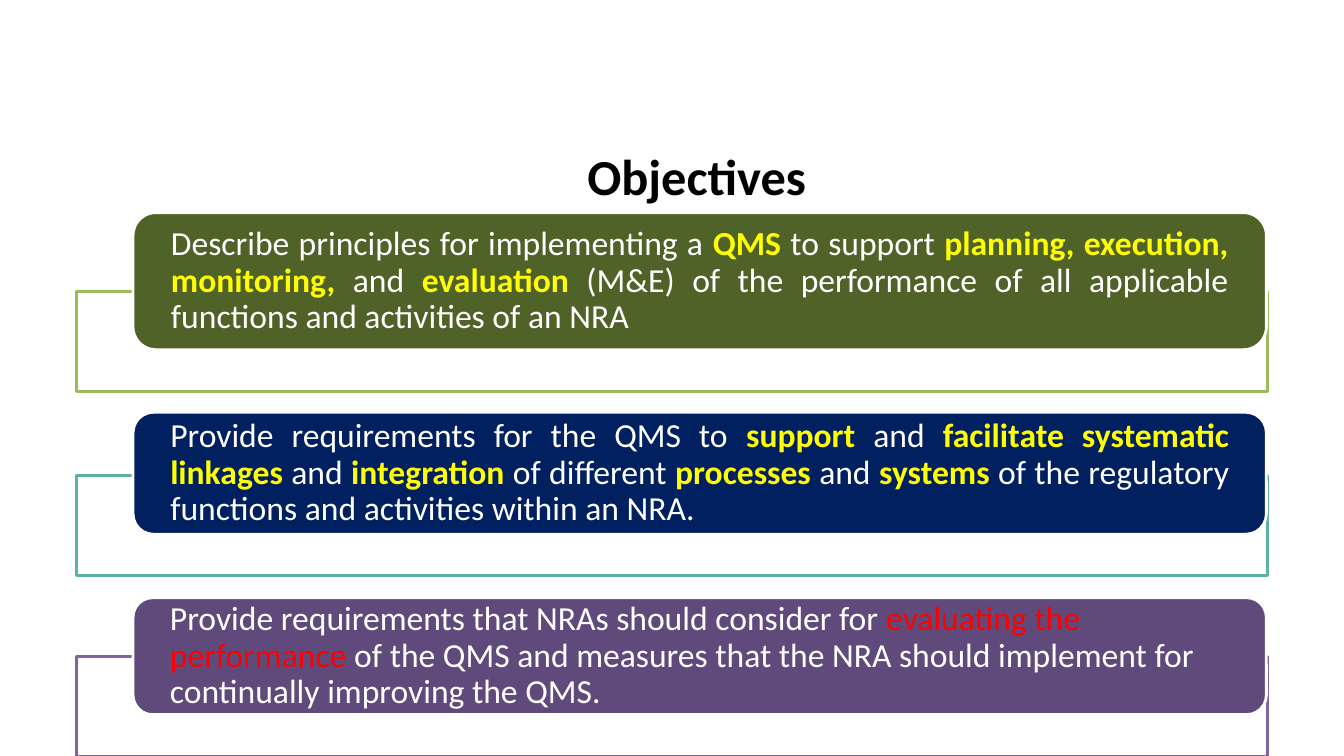
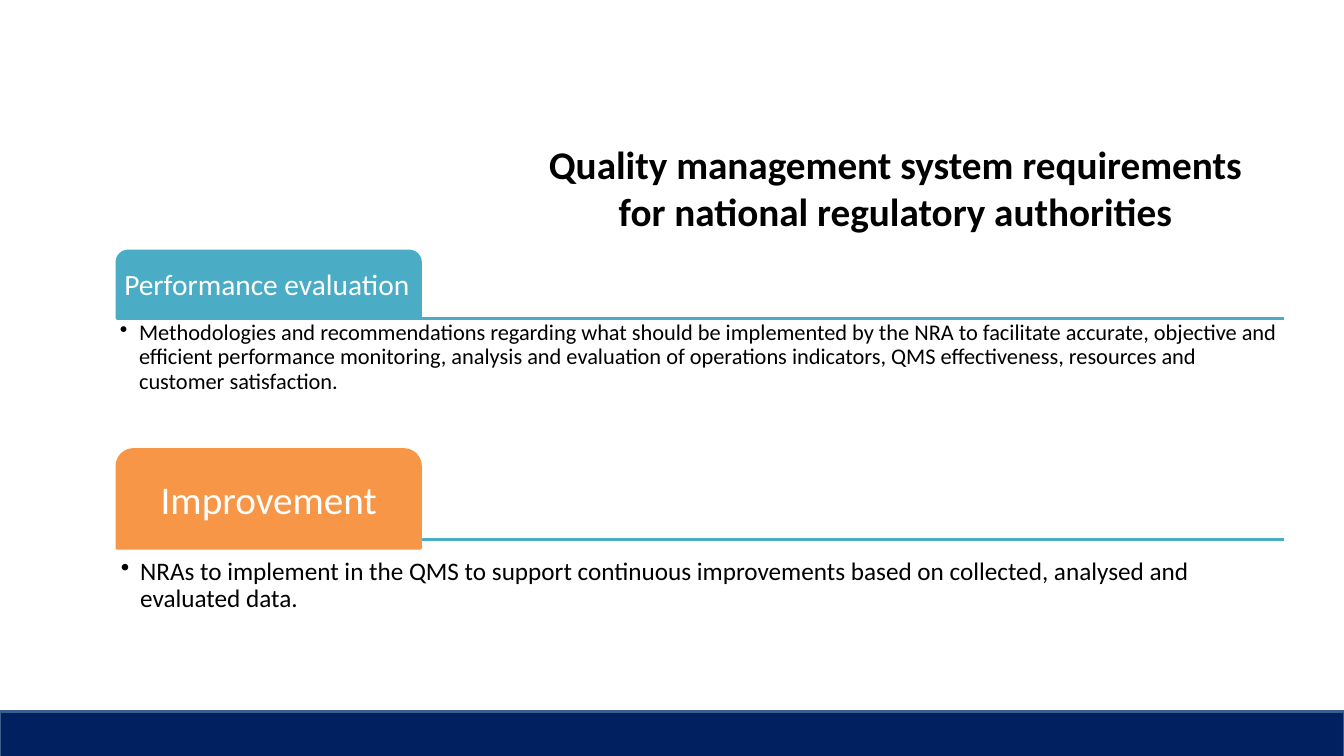
from lxml import etree
from pptx import Presentation
from pptx.dml.color import RGBColor
from pptx.enum.shapes import MSO_CONNECTOR, MSO_SHAPE
from pptx.enum.text import MSO_ANCHOR, PP_ALIGN
from pptx.oxml.ns import qn
from pptx.util import Inches, Pt

RECT, ROUNDED = MSO_SHAPE.RECTANGLE, MSO_SHAPE.ROUNDED_RECTANGLE
TAB = MSO_SHAPE.ROUND_2_SAME_RECTANGLE
STRAIGHT = MSO_CONNECTOR.STRAIGHT
TOP, MIDDLE = MSO_ANCHOR.TOP, MSO_ANCHOR.MIDDLE
LEFT, CENTER, JUSTIFY = PP_ALIGN.LEFT, PP_ALIGN.CENTER, PP_ALIGN.JUSTIFY

FONT = "Calibri"
WHITE, BLACK, NAVY, TEAL = "FFFFFF", "000000", "002060", "4BACC6"
YELLOW, RED, ORANGE = "FFFF00", "FF0000", "F79646"
LINE_WIDTH = Pt(2)
LINE_SPACING = 0.9

# Frame top, frame line, card top, card height, card fill, alignment,
# highlight colour, highlight bold, text with *highlighted* words
OBJECTIVES = [
    (2.89, "9BBB59", 2.11, 1.36, "4F6228", JUSTIFY, YELLOW, True,
     "Describe principles for implementing a *QMS *to support "
     "*planning, execution, monitoring,* and *evaluation *(M&E) of the "
     "performance of all applicable functions and activities of an NRA"),
    (4.72, "5EAFA6", 4.09, 1.21, NAVY, JUSTIFY, YELLOW, True,
     "Provide requirements for the QMS to *support* and *facilitate "
     "systematic linkages* and *integration* of different *processes* and "
     "*systems *of the regulatory functions and activities within an NRA."),
    (6.51, "8064A2", 5.93, 1.16, "604A7B", LEFT, RED, False,
     "Provide requirements that NRAs should consider for *evaluating the "
     "performance *of the QMS and measures that the NRA should implement "
     "for continually improving the QMS."),
]

# Tab top, tab height, line top, body top, colour, alignment, tab margin,
# tab size, body margin, body size, heading, body
REQUIREMENTS = [
    (2.49, 0.67, 3.16, 3.16, TEAL, LEFT, 0.04, 21, 0.03, 16,
     "Performance evaluation",
     "Methodologies and recommendations regarding what should be implemented "
     "by the NRA to facilitate accurate, objective and efficient performance "
     "monitoring, analysis and evaluation of operations indicators, QMS "
     "effectiveness, resources and customer satisfaction."),
    (4.46, 0.98, 5.35, 5.5, ORANGE, CENTER, 0.06, 28, 0.04, 18,
     "Improvement",
     "NRAs to implement in the QMS to support continuous improvements based "
     "on collected, analysed and evaluated data."),
]


def rgb(value):
    return RGBColor.from_string(value)


def style_font(font, size, color, bold=False):
    font.name, font.size, font.bold = FONT, Pt(size), bold
    font.color.rgb = rgb(color)


def add_box(slide, kind, left, top, width, height, fill, line):
    box = slide.shapes.add_shape(
        kind, Inches(left), Inches(top), Inches(width), Inches(height))
    box.shadow.inherit = False
    box.fill.solid()
    box.fill.fore_color.rgb = rgb(fill)
    box.line.color.rgb = rgb(line)
    box.line.width = LINE_WIDTH
    return box


def first_para(box, anchor, align, side_margin, end_margin):
    """Set up the text frame of a box and return its paragraph."""
    frame = box.text_frame
    frame.word_wrap = True
    frame.vertical_anchor = anchor
    frame.margin_left = frame.margin_right = Inches(side_margin)
    frame.margin_top = frame.margin_bottom = Inches(end_margin)
    para = frame.paragraphs[0]
    para.alignment = align
    para.line_spacing = LINE_SPACING
    return para


def add_titled_slide(deck, title, left, top, width, height, size):
    slide = deck.slides.add_slide(deck.slide_layouts[5])
    box = slide.shapes.title
    box.left, box.top = Inches(left), Inches(top)
    box.width, box.height = Inches(width), Inches(height)
    box.text_frame.vertical_anchor = MIDDLE
    para = box.text_frame.paragraphs[0]
    para.text = title
    para.alignment = CENTER
    style_font(para.font, size, BLACK, bold=True)
    return slide


def add_objective(slide, left, width, objective):
    (frame_top, frame_line, card_top, card_height, card_fill,
     align, accent, accent_bold, text) = objective
    frame = add_box(slide, RECT, left, frame_top, width, 0.99,
                    WHITE, frame_line)
    color = frame.fill._xPr.find(qn("a:solidFill"))[0]
    etree.SubElement(color, qn("a:alpha"), val="90000")

    card = add_box(slide, ROUNDED, left + 0.56, card_top, width - 0.57,
                   card_height, card_fill, WHITE)
    para = first_para(card, MIDDLE, align, 0.31, 0)
    for index, words in enumerate(text.split("*")):
        span = para.add_run()
        span.text = words
        highlighted = index % 2 == 1
        style_font(span.font, 24, accent if highlighted else WHITE,
                   highlighted and accent_bold)


def add_rule(slide, left, top, width):
    rule = slide.shapes.add_connector(
        STRAIGHT, Inches(left), Inches(top), Inches(left + width), Inches(top))
    rule.line.color.rgb = rgb(TEAL)
    rule.line.width = LINE_WIDTH
    etree.SubElement(rule._element.spPr, qn("a:effectLst"))


def add_bullet(para):
    props = para._p.get_or_add_pPr()
    props.set("marL", str(Inches(0.19)))
    props.set("indent", str(-Inches(0.19)))
    etree.SubElement(props, qn("a:buChar"), char="•")


def add_requirement(slide, left, width, requirement):
    (tab_top, tab_height, rule_top, body_top, color, align, tab_margin,
     tab_size, body_margin, body_size, heading, body) = requirement
    add_rule(slide, left, rule_top, width)

    tab = add_box(slide, TAB, left, tab_top, 3.01, tab_height, color, color)
    para = first_para(tab, MIDDLE, align, tab_margin, tab_margin)
    para.text = heading
    style_font(para.font, tab_size, WHITE)

    box = slide.shapes.add_textbox(
        Inches(left), Inches(body_top), Inches(width), Inches(1.34))
    para = first_para(box, TOP, LEFT, body_margin, body_margin)
    para.text = body
    add_bullet(para)
    style_font(para.font, body_size, BLACK)


def build_objectives(deck):
    slide = add_titled_slide(deck, "Objectives", 5.25, 1.22, 3.32, 1.03, 36)
    for objective in OBJECTIVES:
        add_objective(slide, 0.76, 11.81, objective)


def build_requirements(deck):
    slide = add_titled_slide(
        deck,
        "Quality management system requirements\v"
        "for national regulatory authorities",
        4.7, 1.23, 8.36, 1.25, 28)
    for requirement in REQUIREMENTS:
        add_requirement(slide, 1.16, 11.57, requirement)
    add_box(slide, RECT, 0, 7.06, 13.33, 0.47, NAVY, "3A5F8C")


def main():
    deck = Presentation()
    deck.slide_width, deck.slide_height = Inches(13.33), Inches(7.5)
    build_objectives(deck)
    build_requirements(deck)
    deck.save("out.pptx")


if __name__ == "__main__":
    main()
